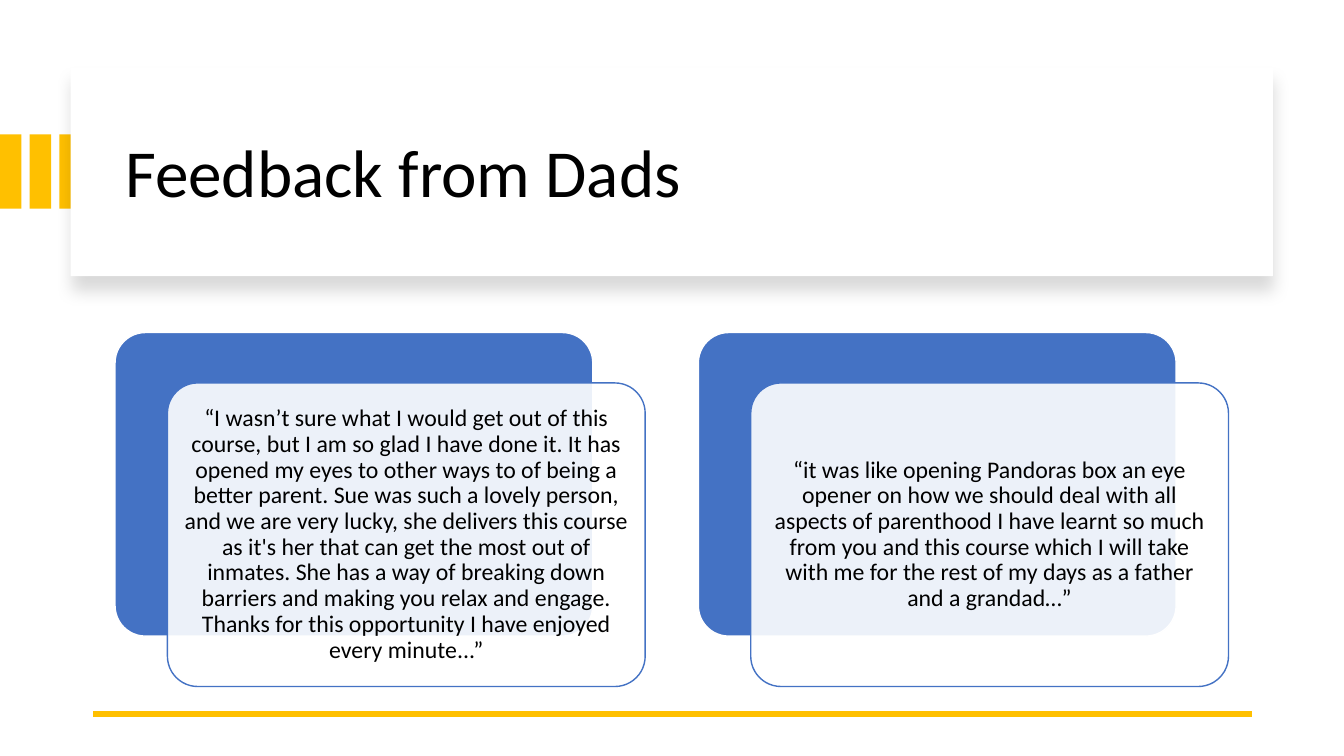
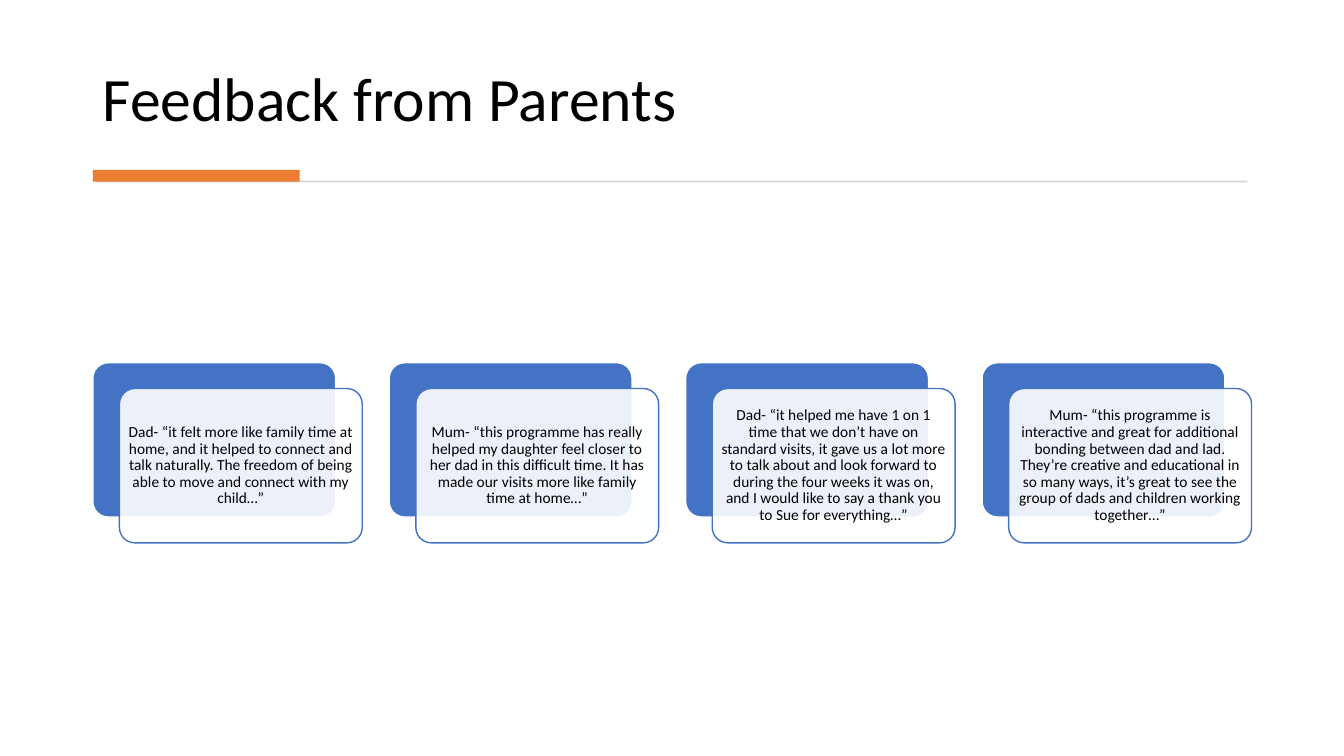
from dataclasses import dataclass

from lxml.etree import SubElement
from pptx import Presentation
from pptx.dml.color import RGBColor
from pptx.enum.shapes import MSO_CONNECTOR, MSO_SHAPE
from pptx.enum.text import MSO_ANCHOR, MSO_AUTO_SIZE, PP_ALIGN
from pptx.oxml.ns import qn
from pptx.presentation import Presentation as Deck
from pptx.shapes.autoshape import Shape
from pptx.slide import Slide
from pptx.text.text import TextFrame
from pptx.util import Cm, Pt

FONT = "Calibri"
BLACK = RGBColor(0x00, 0x00, 0x00)
WHITE = RGBColor(0xFF, 0xFF, 0xFF)
BLUE = RGBColor(0x44, 0x72, 0xC4)
GOLD = RGBColor(0xFF, 0xC0, 0x00)
ORANGE = RGBColor(0xED, 0x7D, 0x31)
GREY = RGBColor(0xD5, 0xD5, 0xD5)


@dataclass(frozen=True)
class Box:
    """A rectangle in centimetres."""

    left: float
    top: float
    width: float
    height: float

    def move(self, right: float, down: float = 0) -> "Box":
        """Return the same box, shifted."""
        return Box(self.left + right, self.top + down, self.width, self.height)

    def cm(self) -> tuple[Cm, Cm, Cm, Cm]:
        """Return the four lengths for python-pptx."""
        return Cm(self.left), Cm(self.top), Cm(self.width), Cm(self.height)


@dataclass(frozen=True)
class Row:
    """A row of quote cards, each a blue back and a pale front."""

    first: Box
    step: float
    right: float
    down: float
    inset: float
    size: int


DADS = Row(Box(2.9, 8.38, 12.04, 7.65), 14.7, 1.32, 1.27, 0.18, 17)
PARENTS = Row(Box(2.34, 9.14, 6.12, 3.89), 7.47, 0.67, 0.65, 0.12, 11)

DAD_QUOTES = [
    "“I wasn’t sure what I would get out of this course, but I am so glad I have done it. "
    "It has opened my eyes to other ways to of being a better parent. Sue was such a lovely "
    "person, and we are very lucky, she delivers this course as it's her that can get the "
    "most out of inmates. She has a way of breaking down barriers and making you relax and "
    "engage. Thanks for this opportunity I have enjoyed every minute...”",
    "“it was like opening Pandoras box an eye opener on how we should deal with all aspects "
    "of parenthood I have learnt so much from you and this course which I will take with me "
    "for the rest of my days as a father and a grandad…”",
]
PARENT_QUOTES = [
    "Dad- “it felt more like family time at home, and it helped to connect and talk "
    "naturally. The freedom of being able to move and connect with my child…”",
    "Mum- “this programme has really helped my daughter feel closer to her dad in this "
    "difficult time. It has made our visits more like family time at home…”",
    "Dad- “it helped me have 1 on 1 time that we don’t have on standard visits, it gave us "
    "a lot more to talk about and look forward to during the four weeks it was on, and I "
    "would like to say a thank you to Sue for everything…”",
    "Mum- “this programme is interactive and great for additional bonding between dad and "
    "lad. They’re creative and educational in so many ways, it’s great to see the group of "
    "dads and children working together…”",
]


def write(frame: TextFrame, text: str, size: int, align: PP_ALIGN, anchor: MSO_ANCHOR) -> None:
    """Fill a frame with one styled paragraph."""
    frame.text = text
    frame.word_wrap = True
    frame.auto_size = MSO_AUTO_SIZE.NONE
    frame.vertical_anchor = anchor
    para = frame.paragraphs[0]
    para.alignment = align
    para.line_spacing = 0.9
    for run in para.runs:
        run.font.name = FONT
        run.font.size = Pt(size)
        run.font.color.rgb = BLACK


def add_block(slide: Slide, box: Box, fill: RGBColor, kind: MSO_SHAPE = MSO_SHAPE.RECTANGLE) -> Shape:
    """Add a flat filled shape without an outline."""
    shape = slide.shapes.add_shape(kind, *box.cm())
    shape.shadow.inherit = False
    shape.fill.solid()
    shape.fill.fore_color.rgb = fill
    shape.line.fill.background()
    return shape


def add_card(slide: Slide, box: Box, fill: RGBColor, line: RGBColor) -> Shape:
    """Add a rounded, outlined card."""
    card = add_block(slide, box, fill, MSO_SHAPE.ROUNDED_RECTANGLE)
    card.adjustments[0] = 0.1
    card.line.color.rgb = line
    card.line.width = Pt(1)
    return card


def add_row(slide: Slide, row: Row, quotes: list[str]) -> None:
    """Add one pair of cards for each quote."""
    for i, quote in enumerate(quotes):
        back = row.first.move(i * row.step)
        add_card(slide, back, BLUE, WHITE)
        front = add_card(slide, back.move(row.right, row.down), WHITE, BLUE)
        color = front.element.spPr.find(qn("a:solidFill"))[0]
        SubElement(color, qn("a:alpha"), val="90000")
        frame = front.text_frame
        frame.margin_left = frame.margin_right = Cm(row.inset)
        frame.margin_top = frame.margin_bottom = Cm(row.inset)
        write(frame, quote, row.size, PP_ALIGN.CENTER, MSO_ANCHOR.MIDDLE)


def set_title(slide: Slide, text: str, box: Box, size: int, anchor: MSO_ANCHOR) -> None:
    """Place the title in front of what is drawn so far."""
    title = slide.shapes.title
    title.left, title.top, title.width, title.height = box.cm()
    write(title.text_frame, text, size, PP_ALIGN.LEFT, anchor)
    title.element.getparent().append(title.element)


def add_shade(shape: Shape) -> None:
    """Give a shape a soft shadow below it."""
    effects = shape.element.spPr.find(qn("a:effectLst"))
    shade = SubElement(
        effects, qn("a:outerShdw"), blurRad=str(Pt(11)), dist=str(Pt(10)),
        dir="5400000", algn="t", rotWithShape="0",
    )
    color = SubElement(shade, qn("a:srgbClr"), val=str(BLACK))
    SubElement(color, qn("a:alpha"), val="15000")


def add_line(slide: Slide, left: float, right: float, top: float) -> None:
    """Add the thick gold line at the foot."""
    line = slide.shapes.add_connector(
        MSO_CONNECTOR.STRAIGHT, Cm(right), Cm(top), Cm(left), Cm(top)
    )
    line.line.color.rgb = GOLD
    line.line.width = Pt(4.5)
    SubElement(line.element.spPr, qn("a:effectLst"))


def new_slide(deck: Deck) -> Slide:
    """Add a slide that has only a title."""
    return deck.slides.add_slide(deck.slide_layouts[5])


def add_dads(deck: Deck) -> None:
    """Build the slide with quotes from dads."""
    slide = new_slide(deck)
    for i in range(3):
        add_block(slide, Box(0, 3.39, 0.54, 1.87).move(i * 0.75), GOLD)
    add_shade(add_block(slide, Box(1.78, 1.7, 30.3, 5.26), WHITE))
    set_title(slide, "Feedback from Dads", Box(2.9, 2.26, 28.27, 4.32), 48, MSO_ANCHOR.MIDDLE)
    add_line(slide, 2.34, 31.55, 18)
    add_row(slide, DADS, DAD_QUOTES)


def add_parents(deck: Deck) -> None:
    """Build the slide with quotes from parents."""
    slide = new_slide(deck)
    set_title(slide, "Feedback from Parents", Box(2.34, 0.71, 29.18, 2.82), 44, MSO_ANCHOR.BOTTOM)
    add_block(slide, Box(2.41, 4.55, 29.03, 0.05), GREY)
    add_block(slide, Box(2.34, 4.28, 5.21, 0.3), ORANGE)
    add_row(slide, PARENTS, PARENT_QUOTES)


def main() -> None:
    """Build and save the deck."""
    deck = Presentation()
    deck.slide_width, deck.slide_height = Cm(33.87), Cm(19.05)
    add_dads(deck)
    add_parents(deck)
    deck.save("out.pptx")


if __name__ == "__main__":
    main()
